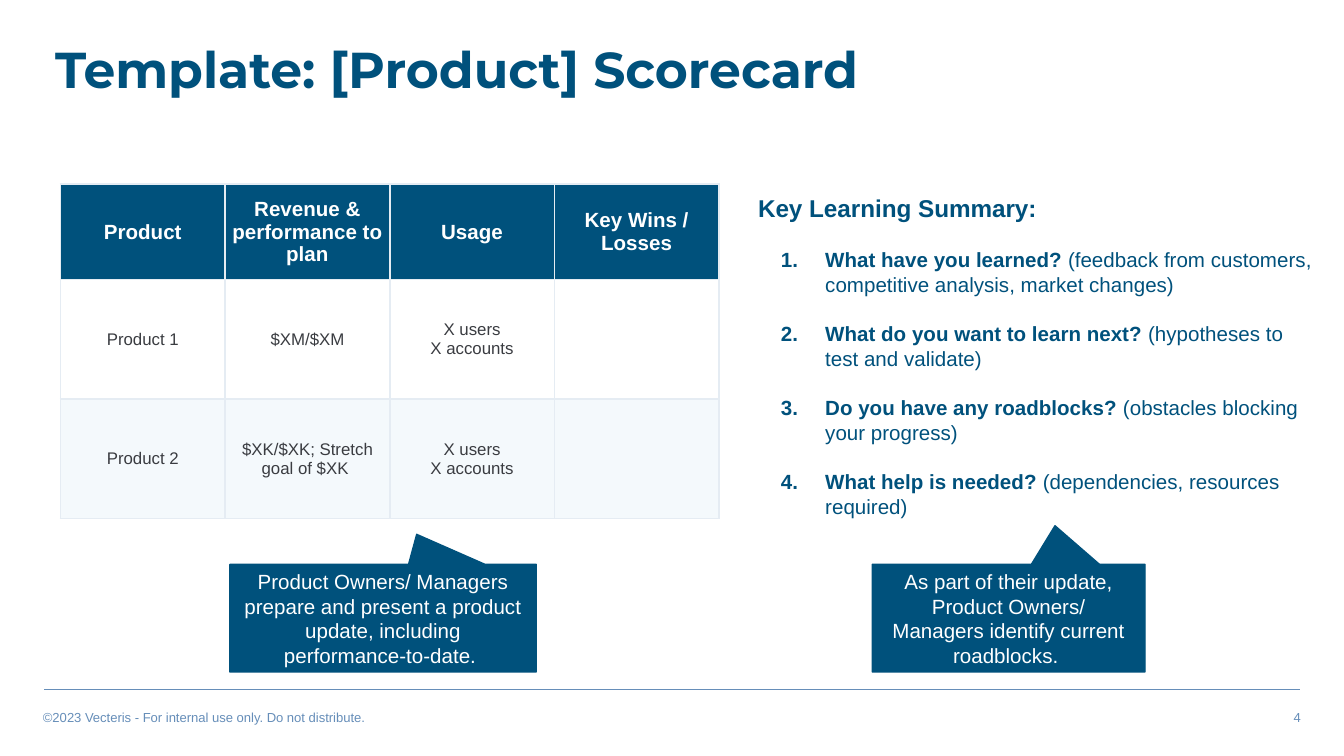
import pptx
import pptx.dml.color
import pptx.enum.shapes
import pptx.enum.text
import pptx.oxml
import pptx.oxml.ns
import pptx.util
from lxml import etree

Inches = pptx.util.Inches
Pt = pptx.util.Pt
ALIGN = pptx.enum.text.PP_ALIGN
ANCHOR = pptx.enum.text.MSO_ANCHOR

NAVY, STEEL, WHITE, INK = "00517C", "668EB9", "FFFFFF", "3A3C41"
PALE, RULE = "F4F9FC", "E5ECF3"

HEADERS = ["Product", "Revenue & performance to plan", "Usage", "Key Wins / Losses"]
PRODUCTS = [
    ["Product 1", "$XM/$XM", "X users\nX accounts", ""],
    ["Product 2", "$XK/$XK; Stretch goal of $XK ", "X users\nX accounts", ""],
]
QUESTIONS = [
    ("What have you learned? ",
     "(feedback from customers, competitive analysis, market changes)"),
    ("What do you want to learn next? ", "(hypotheses to test and validate)"),
    ("Do you have any roadblocks? ", "(obstacles blocking your progress)"),
    ("What help is needed? ", "(dependencies, resources required)"),
]


def color(value):
    return pptx.dml.color.RGBColor.from_string(value)


def style(span, size, value, bold=False, face="Arial"):
    span.font.size = Pt(size)
    span.font.name = face
    span.font.bold = bold
    span.font.color.rgb = color(value)


def fill(item, value):
    item.fill.solid()
    item.fill.fore_color.rgb = color(value)


def set_margins(frame, side, end):
    frame.margin_left = frame.margin_right = Inches(side)
    frame.margin_top = frame.margin_bottom = Inches(end)


def place(shape, left, top, width, height):
    shape.left, shape.top = Inches(left), Inches(top)
    shape.width, shape.height = Inches(width), Inches(height)


def add_title(page, left, top, width, height):
    title = page.shapes.title
    place(title, left, top, width, height)
    frame = title.text_frame
    frame.text = "Template: [Product] Scorecard"
    frame.auto_size = pptx.enum.text.MSO_AUTO_SIZE.NONE
    frame.vertical_anchor = ANCHOR.MIDDLE
    frame.word_wrap = True
    set_margins(frame, 0.07, 0.04)
    para = frame.paragraphs[0]
    para.alignment = ALIGN.LEFT
    para.line_spacing = 0.9
    style(para.runs[0], 27, NAVY, True, "Montserrat")


def add_footer(page, left, top, width, height):
    """Draw the rule with the notice on its left and the page number on its right."""
    line = page.shapes.add_connector(
        pptx.enum.shapes.MSO_CONNECTOR.STRAIGHT,
        Inches(left), Inches(top), Inches(left + width), Inches(top))
    line.line.color.rgb = color(STEEL)
    line.line.width = Pt(1)
    etree.SubElement(line.element.spPr, pptx.oxml.ns.qn("a:effectLst"))

    label_width = 4
    labels = [
        ("©2023 Vecteris - For internal use only. Do not distribute.",
         left - 0.08, ALIGN.LEFT),
        ("4", left + width + 0.08 - label_width, ALIGN.RIGHT),
    ]
    for text, x, alignment in labels:
        box = page.shapes.add_textbox(
            Inches(x), Inches(top + 0.11), Inches(label_width), Inches(height - 0.11))
        frame = box.text_frame
        frame.word_wrap = True
        set_margins(frame, 0.07, 0.04)
        frame.text = text
        frame.paragraphs[0].alignment = alignment
        style(frame.paragraphs[0].runs[0], 7, STEEL)


def add_borders(cell, value, points):
    properties = cell._tc.get_or_add_tcPr()
    for index, side in enumerate(["lnL", "lnR", "lnT", "lnB"]):
        properties.insert(index, pptx.oxml.parse_xml(
            f'<a:{side} {pptx.oxml.ns.nsdecls("a")} w="{Pt(points)}">'
            f'<a:solidFill><a:srgbClr val="{value}"/></a:solidFill></a:{side}>'))


def add_scorecard(page, left, top, width, header_height, row_height):
    rows = [HEADERS] + PRODUCTS
    height = header_height + row_height * len(PRODUCTS)
    table = page.shapes.add_table(
        len(rows), len(HEADERS),
        Inches(left), Inches(top), Inches(width), Inches(height)).table
    for index, row in enumerate(table.rows):
        row.height = Inches(row_height if index else header_height)
    for index, texts in enumerate(rows):
        background = [NAVY, WHITE, PALE][index]
        for cell, text in zip(table.rows[index].cells, texts):
            fill(cell, background)
            add_borders(cell, RULE, 1)
            cell.vertical_anchor = ANCHOR.MIDDLE
            set_margins(cell, 0.05, 0.02)
            cell.text = text
            for para in cell.text_frame.paragraphs:
                para.alignment = ALIGN.CENTER
                for span in para.runs:
                    if index:
                        style(span, 9, INK)
                    else:
                        style(span, 11, WHITE, True)


def set_bullet(para, indent, hanging, bullet):
    properties = para._p.get_or_add_pPr()
    properties.set("marL", str(Inches(indent)))
    properties.set("indent", str(Inches(-hanging)))
    namespace = pptx.oxml.ns.nsdecls("a")
    if bullet == "buAutoNum":
        properties.append(pptx.oxml.parse_xml(
            f'<a:buClr {namespace}><a:srgbClr val="{NAVY}"/></a:buClr>'))
        properties.append(pptx.oxml.parse_xml(
            f'<a:buFont {namespace} typeface="Arial"/>'))
        properties.append(pptx.oxml.parse_xml(
            f'<a:buAutoNum {namespace} type="arabicPeriod"/>'))
    else:
        properties.append(pptx.oxml.parse_xml(f'<a:buNone {namespace}/>'))


def add_learning_summary(page, left, top, width, height):
    body = page.placeholders[1]
    place(body, left, top, width, height)
    frame = body.text_frame
    frame.auto_size = pptx.enum.text.MSO_AUTO_SIZE.NONE
    frame.vertical_anchor = ANCHOR.TOP
    frame.word_wrap = True
    set_margins(frame, 0.07, 0.07)

    frame.text = "Key Learning Summary:"
    heading = frame.paragraphs[0]
    heading.space_before = Pt(0)
    set_bullet(heading, 0, 0, "buNone")
    style(heading.runs[0], 13, NAVY, True)

    for question, hint in QUESTIONS:
        para = frame.add_paragraph()
        para.space_before = Pt(13.2)
        set_bullet(para, 0.5, 0.33, "buAutoNum")
        for text, bold in [(question, True), (hint, False)]:
            span = para.add_run()
            span.text = text
            style(span, 11, NAVY, bold)


def add_callout(page, left, top, width, height, tip, text):
    """Draw a callout whose tip is given as fractions of its size from its centre."""
    callout = page.shapes.add_shape(
        pptx.enum.shapes.MSO_SHAPE.RECTANGULAR_CALLOUT,
        Inches(left), Inches(top), Inches(width), Inches(height))
    callout.adjustments[0], callout.adjustments[1] = tip
    callout.shadow.inherit = False
    fill(callout, NAVY)
    callout.line.color.rgb = color(NAVY)
    callout.line.width = Pt(0.75)
    frame = callout.text_frame
    frame.word_wrap = True
    frame.vertical_anchor = ANCHOR.MIDDLE
    set_margins(frame, 0.1, 0.1)
    frame.text = text
    frame.paragraphs[0].alignment = ALIGN.CENTER
    style(frame.paragraphs[0].runs[0], 11, WHITE)


def main():
    deck = pptx.Presentation()
    deck.slide_width = Inches(10)
    deck.slide_height = deck.slide_width * 9 // 16
    page = deck.slides.add_slide(deck.slide_layouts[1])
    add_footer(page, 0.33, 5.13, 9.34, 0.3)
    add_title(page, 0.34, -0.01, 6.45, 1.09)
    add_scorecard(page, 0.45, 1.37, 4.9, 0.71, 0.89)
    add_learning_summary(page, 5.57, 1.37, 4.33, 2.98)
    add_callout(page, 1.71, 4.2, 2.28, 0.8, (0.11, -0.78),
                "Product Owners/ Managers prepare and present a product update, "
                "including performance-to-date. ")
    add_callout(page, 6.49, 4.2, 2.03, 0.8, (0.17, -0.86),
                "As part of their update, Product Owners/ Managers identify "
                "current roadblocks. ")
    deck.save("out.pptx")


if __name__ == "__main__":
    main()
